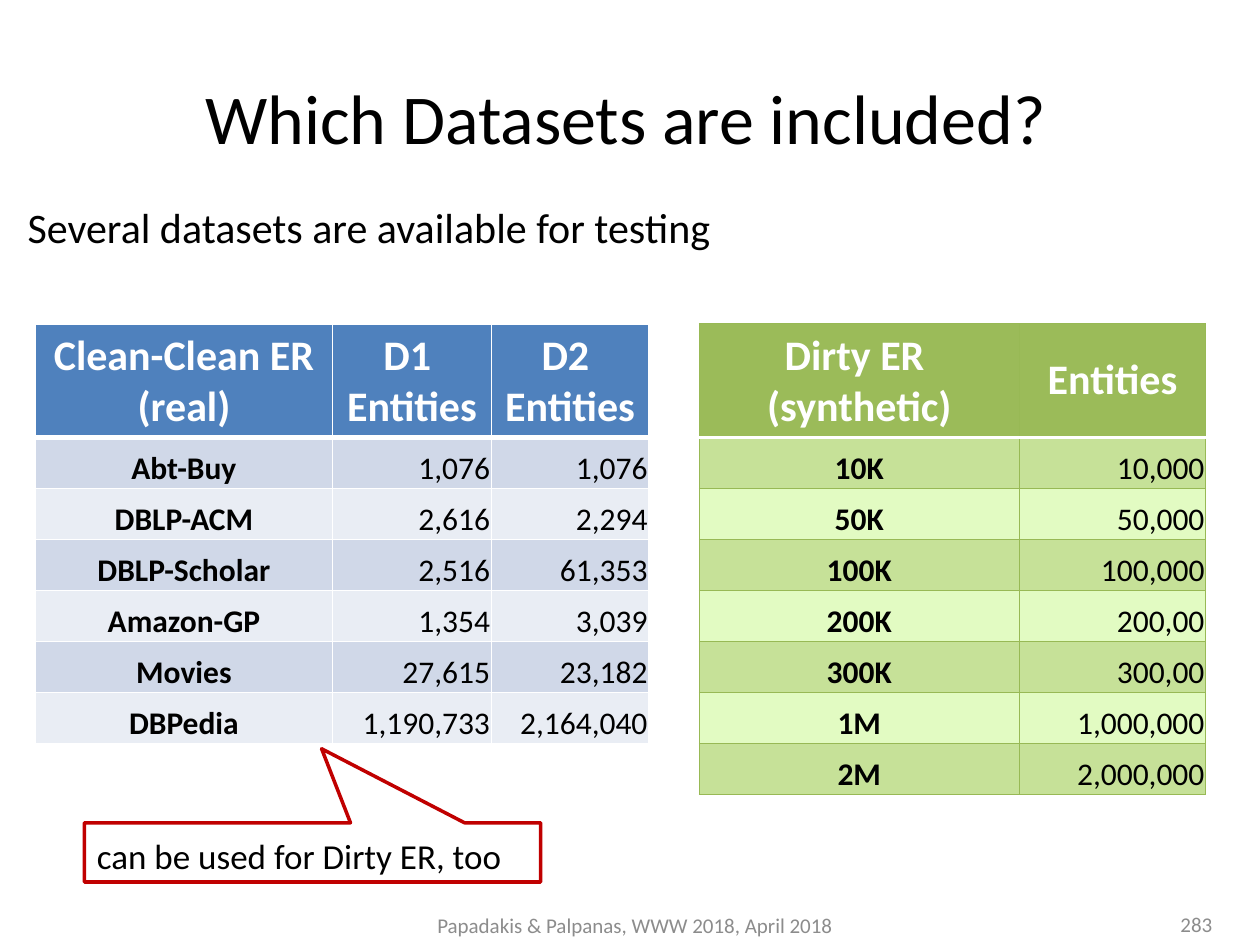
from pptx import Presentation
from pptx.dml.color import RGBColor
from pptx.enum.shapes import MSO_SHAPE
from pptx.enum.text import MSO_ANCHOR, PP_ALIGN
from pptx.oxml.ns import qn
from pptx.util import Inches, Pt
from lxml import etree

CALLOUT = MSO_SHAPE.RECTANGULAR_CALLOUT
TOP, MIDDLE, BOTTOM = MSO_ANCHOR.TOP, MSO_ANCHOR.MIDDLE, MSO_ANCHOR.BOTTOM
LEFT, CENTER, RIGHT = PP_ALIGN.LEFT, PP_ALIGN.CENTER, PP_ALIGN.RIGHT
WIDTH, HEIGHT = Inches(10), Inches(7.5)
FONT, BLACK, WHITE, GREY = "Calibri", "000000", "FFFFFF", "8C8C8C"
HEADER_ROW, BODY_ROW = 12, 5.4
TABLE_TOP = 34.27

CLEAN_ROWS = [
    ["Clean-Clean ER (real)", "D1 \nEntities", "D2 \nEntities"],
    ["Abt-Buy", "1,076", "1,076"],
    ["DBLP-ACM", "2,616", "2,294"],
    ["DBLP-Scholar", "2,516", "61,353"],
    ["Amazon-GP", "1,354", "3,039"],
    ["Movies", "27,615", "23,182"],
    ["DBPedia", "1,190,733", "2,164,040"],
]
DIRTY_ROWS = [
    ["Dirty ER \n(synthetic)", "Entities"],
    ["10K", "10,000"],
    ["50K", "50,000"],
    ["100K", "100,000"],
    ["200K", "200,00"],
    ["300K", "300,00"],
    ["1M", "1,000,000"],
    ["2M", "2,000,000"],
]
CLEAN_STYLE = {"header": "4F81BD", "bands": ("D0D8E8", "E9EDF4"),
               "border": (WHITE, 1), "rule": (WHITE, 3)}
DIRTY_STYLE = {"header": "9BBB59", "bands": ("C6E198", "E2FBC2"),
               "border": ("98B955", 0.75), "rule": (WHITE, 2)}


def color(code):
    """Turn a hex string into a colour."""
    return RGBColor.from_string(code)


def across(percent):
    """Give a share of the slide's width."""
    return int(WIDTH * percent / 100)


def down(percent):
    """Give a share of the slide's height."""
    return int(HEIGHT * percent / 100)


def area(left, top, width, height):
    """Turn four percentages into a position and a size."""
    return across(left), down(top), across(width), down(height)


def write(frame, text, size, code, align=LEFT, anchor=TOP, bold=False):
    """Fill a text frame with one formatted paragraph."""
    frame.word_wrap = True
    frame.vertical_anchor = anchor
    para = frame.paragraphs[0]
    para.alignment = align
    for index, line in enumerate(text.split("\n")):
        if index:
            para.add_line_break()
        span = para.add_run()
        span.text = line
        span.font.name, span.font.size = FONT, Pt(size)
        span.font.bold, span.font.color.rgb = bold, color(code)


def add_title(page, text, place):
    """Move the title placeholder and fill it."""
    title = page.shapes.title
    title.left, title.top, title.width, title.height = place
    write(title.text_frame, text, 40, BLACK, CENTER, MIDDLE)


def add_text(page, text, place, size, code, align=LEFT, anchor=TOP):
    """Add a text box."""
    box = page.shapes.add_textbox(*place)
    write(box.text_frame, text, size, code, align, anchor)


def add_callout(page, text, place, tip):
    """Add an outlined callout whose tip is given from its centre."""
    box = page.shapes.add_shape(CALLOUT, *place)
    box.shadow.inherit = False
    box.fill.background()
    box.line.color.rgb, box.line.width = color("C00000"), Pt(2)
    box.adjustments[0], box.adjustments[1] = tip
    box.text_frame.margin_top = Inches(0.09)
    write(box.text_frame, text, 20, BLACK)


def draw_border(cell, side, code, width):
    """Draw one edge of a cell."""
    edge = etree.SubElement(cell._tc.get_or_add_tcPr(), qn(f"a:ln{side}"),
                            w=str(Pt(width)))
    fill = etree.SubElement(edge, qn("a:solidFill"))
    etree.SubElement(fill, qn("a:srgbClr"), val=code)


def format_cell(cell, text, row, column, style):
    """Write a cell and give it its borders and fill."""
    borders = dict.fromkeys("LRTB", style["border"])
    if row == 0:
        borders["B"] = style["rule"]
        fill = style["header"]
        anchor = MIDDLE if text == "Entities" else TOP
        write(cell.text_frame, text, 24, WHITE, CENTER, anchor, True)
    else:
        if row == 1:
            borders["T"] = style["rule"]
        fill = style["bands"][(row - 1) % 2]
        cell.margin_left = cell.margin_right = cell.margin_top = Inches(0.01)
        cell.margin_bottom = 0
        align = RIGHT if column else CENTER
        write(cell.text_frame, text, 18, BLACK, align, BOTTOM, column == 0)
        cell.vertical_anchor = anchor = BOTTOM
    cell.vertical_anchor = anchor
    for side, (code, width) in borders.items():
        draw_border(cell, side, code, width)
    cell.fill.solid()
    cell.fill.fore_color.rgb = color(fill)


def add_dataset_table(page, rows, left, widths, style):
    """Add a table with a tall header and banded rows."""
    heights = [HEADER_ROW] + [BODY_ROW] * (len(rows) - 1)
    place = area(left, TABLE_TOP, sum(widths), sum(heights))
    table = page.shapes.add_table(len(rows), len(widths), *place).table
    for column, width in zip(table.columns, widths):
        column.width = across(width)
    for row, (texts, height) in enumerate(zip(rows, heights)):
        table.rows[row].height = down(height)
        for column, text in enumerate(texts):
            format_cell(table.cell(row, column), text, row, column, style)


def main():
    """Build the slide and save it."""
    deck = Presentation()
    deck.slide_width, deck.slide_height = WIDTH, HEIGHT
    page = deck.slides.add_slide(deck.slide_layouts[5])
    add_title(page, "Which Datasets are included?", area(2, 4, 95.3, 16.67))
    add_text(page, "Several datasets are available for testing",
             area(1.2, 20.67, 59.5, 6.67), 24, BLACK)
    add_dataset_table(page, CLEAN_ROWS, 2.8, [23.6, 12.6, 12.5], CLEAN_STYLE)
    add_dataset_table(page, DIRTY_ROWS, 55.5, [25.4, 14.8], DIRTY_STYLE)
    add_callout(page, "can be used for Dirty ER, too",
                area(6.7, 87.07, 36.2, 6.27), (0.02, -1.75))
    add_text(page, "Papadakis & Palpanas, WWW 2018, April 2018",
             area(32.7, 95.2, 35.4, 5.33), 12, GREY, CENTER, MIDDLE)
    add_text(page, "283", area(73.9, 95.07, 23.3, 5.33), 12, GREY, RIGHT,
             MIDDLE)
    deck.save("out.pptx")


if __name__ == "__main__":
    main()
